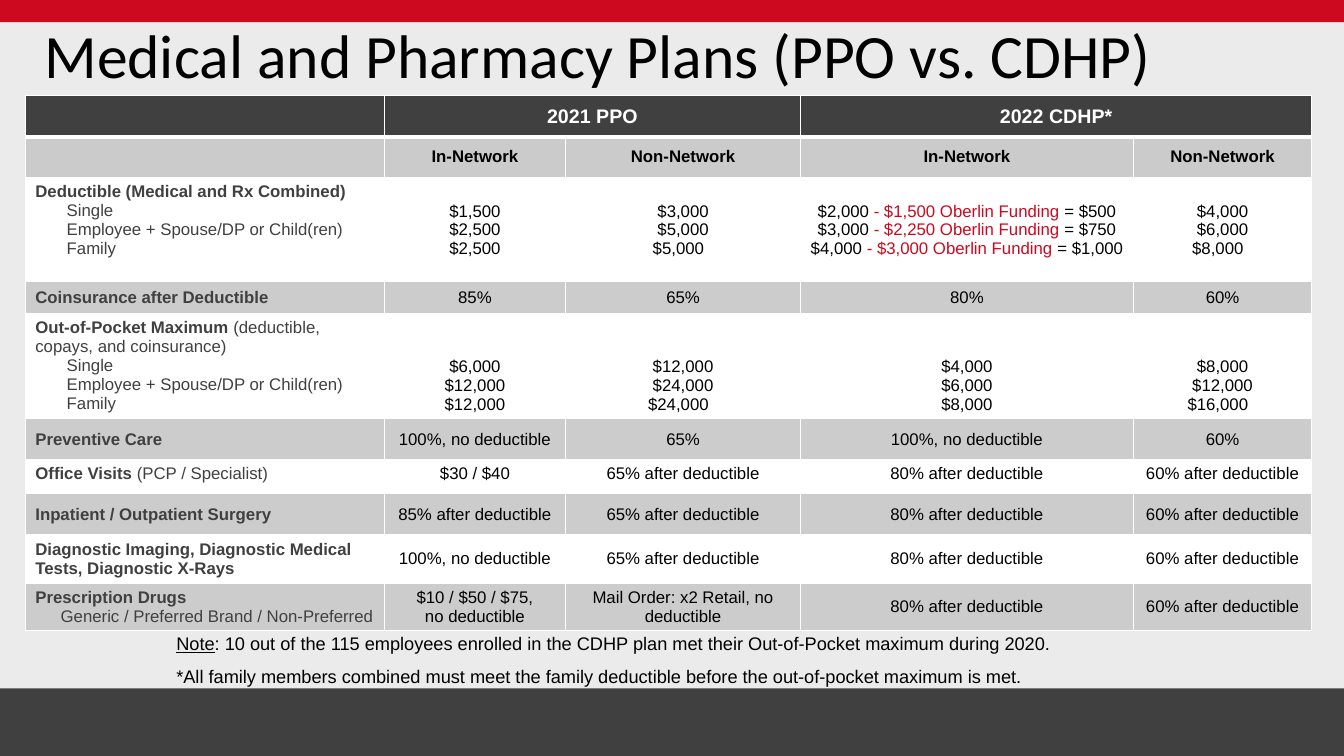
from dataclasses import dataclass
from typing import NamedTuple

from lxml import etree
from pptx import Presentation, util as u
from pptx.dml.color import RGBColor
from pptx.enum import shapes, text
from pptx.oxml import ns

SLIDE_WIDTH, SLIDE_HEIGHT = u.Inches(13.33), u.Inches(7.5)
WHITE, BLACK, CHARCOAL, RED = "FFFFFF", "000000", "404040", "CD0920"
SUBHEAD_GREY, ROW_GREY, BACKDROP = "CBCBCB", "CCCCCC", "D0CECE"
LINE_HEIGHT = 13.8  # points, for 12 pt Arial
CELL_MARGIN = 3.6
COLUMN_WIDTHS = (26.71, 13.5, 17.48, 24.76, 13.28)


class Run(NamedTuple):
    text: str
    color: str = BLACK
    bold: bool = False


class Line(NamedTuple):
    runs: tuple[Run, ...]
    indent: float = 0
    right_inset: float = 0


class Band(NamedTuple):
    top: float
    height: float
    color: str
    opacity: int = 100


Cell = list[Line]


@dataclass
class PlanRow:
    height: float
    cells: list[Cell]
    fill: str
    size: int = 12
    anchor: text.MSO_ANCHOR = text.MSO_ANCHOR.MIDDLE
    lead_lines: int = 0


def across(percent: float) -> int:
    """Length as a percentage of the slide's width."""
    return round(SLIDE_WIDTH * percent / 100)


def down(percent: float) -> int:
    """Length as a percentage of the slide's height."""
    return round(SLIDE_HEIGHT * percent / 100)


def paint(target, color: str) -> None:
    """Give a fill or a font a solid colour."""
    if hasattr(target, "solid"):
        target.solid()
        target.fore_color.rgb = RGBColor.from_string(color)
    else:
        target.color.rgb = RGBColor.from_string(color)


def label(title: str, remark: str = "", details: tuple[str, ...] = (), indent: float = 2.33) -> Cell:
    heading = [Run(title, CHARCOAL, True)]
    if remark:
        heading.append(Run(" " + remark, CHARCOAL))
    return [Line(tuple(heading))] + [Line((Run(item, CHARCOAL),), indent) for item in details]


def values(*items: str, color: str = BLACK, bold: bool = False, last_inset: float = 0) -> Cell:
    lines = [Line((Run(item, color, bold),)) for item in items]
    lines[-1] = lines[-1]._replace(right_inset=last_inset)
    return lines


def funded(gross: str, funding: str, net: str) -> Line:
    return Line((Run(gross + " "), Run(f"- {funding} Oberlin Funding", RED), Run(f" = {net}")))


def plain_cells(*items: str) -> list[Cell]:
    return [values(item) for item in items]


def heading_cells(color: str, *items: str) -> list[Cell]:
    return [values(item, color=color, bold=True) if item else [] for item in items]


TOP = text.MSO_ANCHOR.TOP
TIERS = ("Single", "Employee + Spouse/DP or Child(ren)", "Family")
IN_NETWORK, NON_NETWORK = "In-Network", "Non-Network"
AFTER_60, AFTER_65, AFTER_80, AFTER_85 = (f"{share}% after deductible" for share in (60, 65, 80, 85))
FULL_COVER = "100%, no deductible"

ROWS = [
    PlanRow(5.33, heading_cells(WHITE, "", "2021 PPO", "", "2022 CDHP*", ""), CHARCOAL, 14),
    PlanRow(3.8, heading_cells(BLACK, "", *(IN_NETWORK, NON_NETWORK) * 2), SUBHEAD_GREY),
    PlanRow(13.8, [
        label("Deductible (Medical and Rx Combined)", details=TIERS),
        values("$1,500", "$2,500", "$2,500"),
        values("$3,000", "$5,000", "$5,000", last_inset=0.7),
        [funded("$2,000", "$1,500", "$500"), funded("$3,000", "$2,250", "$750"),
         funded("$4,000", "$3,000", "$1,000")],
        values("$4,000", "$6,000", "$8,000", last_inset=0.7),
    ], WHITE, anchor=TOP, lead_lines=1),
    PlanRow(4.2, [label("Coinsurance after Deductible"),
                  *plain_cells("85%", "65%", "80%", "60%")], ROW_GREY),
    PlanRow(13.8, [
        label("Out-of-Pocket Maximum", "(deductible, copays, and coinsurance)", TIERS),
        values("$6,000", "$12,000", "$12,000"),
        values("$12,000", "$24,000", "$24,000", last_inset=0.7),
        values("$4,000", "$6,000", "$8,000"),
        values("$8,000", "$12,000", "$16,000", last_inset=0.7),
    ], WHITE, anchor=TOP, lead_lines=2),
    PlanRow(5.4, [label("Preventive Care"),
                  *plain_cells(FULL_COVER, "65%", FULL_COVER, "60%")], ROW_GREY),
    PlanRow(4.53, [label("Office Visits", "(PCP / Specialist)"),
                   *plain_cells("$30 / $40", AFTER_65, AFTER_80, AFTER_60)], WHITE, anchor=TOP),
    PlanRow(5.4, [label("Inpatient / Outpatient Surgery"),
                  *plain_cells(AFTER_85, AFTER_65, AFTER_80, AFTER_60)], ROW_GREY),
    PlanRow(6.4, [label("Diagnostic Imaging, Diagnostic Medical Tests, Diagnostic X-Rays"),
                  *plain_cells(FULL_COVER, AFTER_65, AFTER_80, AFTER_60)], WHITE),
    PlanRow(6.27, [
        label("Prescription Drugs", details=("Generic / Preferred Brand / Non-Preferred",), indent=1.88),
        values("$10 / $50 / $75,", "no deductible"),
        *plain_cells("Mail Order: x2 Retail, no deductible", AFTER_80, AFTER_60),
    ], ROW_GREY),
]

BANDS = (Band(0, 91.07, BACKDROP, 40), Band(91.07, 8.93, CHARCOAL), Band(0, 2.93, RED))


def add_band(slide, band: Band) -> None:
    shape = slide.shapes.add_shape(
        shapes.MSO_SHAPE.RECTANGLE, 0, down(band.top), SLIDE_WIDTH, down(band.height))
    shape.shadow.inherit = False
    shape.line.fill.background()
    paint(shape.fill, band.color)
    if band.opacity < 100:
        color = shape.element.spPr.find(".//" + ns.qn("a:srgbClr"))
        etree.SubElement(color, ns.qn("a:alpha"), val=str(band.opacity * 1000))


def add_title(slide) -> None:
    title = slide.shapes.title
    title.left, title.top, title.width, title.height = across(2.55), down(-0.67), across(86.27), down(16.93)
    title.element.getparent().append(title.element)
    frame = title.text_frame
    frame.text = "Medical and Pharmacy Plans (PPO vs. CDHP)"
    frame.auto_size = text.MSO_AUTO_SIZE.NONE
    frame.vertical_anchor = text.MSO_ANCHOR.MIDDLE
    paragraph = frame.paragraphs[0]
    paragraph.alignment = text.PP_ALIGN.LEFT
    paragraph.line_spacing = 0.9
    paragraph.font.name, paragraph.font.size = "Calibri", u.Pt(44)
    paint(paragraph.font, BLACK)


def set_borders(cell, bottom_width: int) -> None:
    properties = cell._tc.get_or_add_tcPr()
    for position, (side, width) in enumerate((("L", 1), ("R", 1), ("T", 1), ("B", bottom_width))):
        border = etree.Element(ns.qn(f"a:ln{side}"), w=str(u.Pt(width)))
        fill = etree.SubElement(border, ns.qn("a:solidFill"))
        etree.SubElement(fill, ns.qn("a:srgbClr"), val=WHITE)
        properties.insert(position, border)


def write_line(paragraph, line: Line, size: int, alignment: text.PP_ALIGN) -> None:
    paragraph.alignment = alignment
    properties = paragraph._p.get_or_add_pPr()
    for name, length in (("marL", line.indent), ("marR", line.right_inset)):
        if length:
            properties.set(name, str(across(length)))
    paragraph.font.name, paragraph.font.size = "Arial", u.Pt(size)
    for item in line.runs:
        run = paragraph.add_run()
        run.text = item.text
        font = paragraph.font if len(line.runs) == 1 else run.font
        font.bold = item.bold
        paint(font, item.color)


def add_plan_table(slide) -> None:
    table = slide.shapes.add_table(
        len(ROWS), len(COLUMN_WIDTHS), across(1.88), down(12.67),
        across(sum(COLUMN_WIDTHS)), down(sum(row.height for row in ROWS))).table
    table.first_row = table.horz_banding = False
    for column, width in zip(table.columns, COLUMN_WIDTHS):
        column.width = across(width)
    for row_index, row in enumerate(ROWS):
        table.rows[row_index].height = down(row.height)
        for column_index, lines in enumerate(row.cells):
            cell = table.cell(row_index, column_index)
            paint(cell.fill, row.fill)
            set_borders(cell, 1 if row_index else 3)
            cell.vertical_anchor = row.anchor
            if column_index and row.lead_lines:
                cell.margin_top = u.Pt(CELL_MARGIN + LINE_HEIGHT * row.lead_lines)
            frame = cell.text_frame
            alignment = text.PP_ALIGN.CENTER if column_index else text.PP_ALIGN.LEFT
            for line_index, line in enumerate(lines):
                paragraph = frame.add_paragraph() if line_index else frame.paragraphs[0]
                write_line(paragraph, line, row.size, alignment)
    for first in (1, 3):
        table.cell(0, first).merge(table.cell(0, first + 1))


def add_notes_below(slide) -> None:
    frame = slide.shapes.add_textbox(across(12.38), down(82.93), across(79.14), down(8.53)).text_frame
    frame.word_wrap = True
    frame.auto_size = text.MSO_AUTO_SIZE.SHAPE_TO_FIT_TEXT
    note, footnote = frame.paragraphs[0], frame.add_paragraph()
    write_line(note, Line((Run("Note"), Run(
        ": 10 out of the 115 employees enrolled in the CDHP plan met their "
        "Out-of-Pocket maximum during 2020."))), 13, text.PP_ALIGN.LEFT)
    note.runs[0].font.underline = True
    write_line(footnote, Line((Run(
        "*All family members combined must meet the family deductible before "
        "the out-of-pocket maximum is met."),)), 13, text.PP_ALIGN.LEFT)
    footnote.space_before = u.Pt(8)


def main() -> None:
    presentation = Presentation()
    presentation.slide_width, presentation.slide_height = SLIDE_WIDTH, SLIDE_HEIGHT
    slide = presentation.slides.add_slide(presentation.slide_layouts[5])
    for band in BANDS:
        add_band(slide, band)
    add_title(slide)
    add_plan_table(slide)
    add_notes_below(slide)
    presentation.save("out.pptx")


if __name__ == "__main__":
    main()
